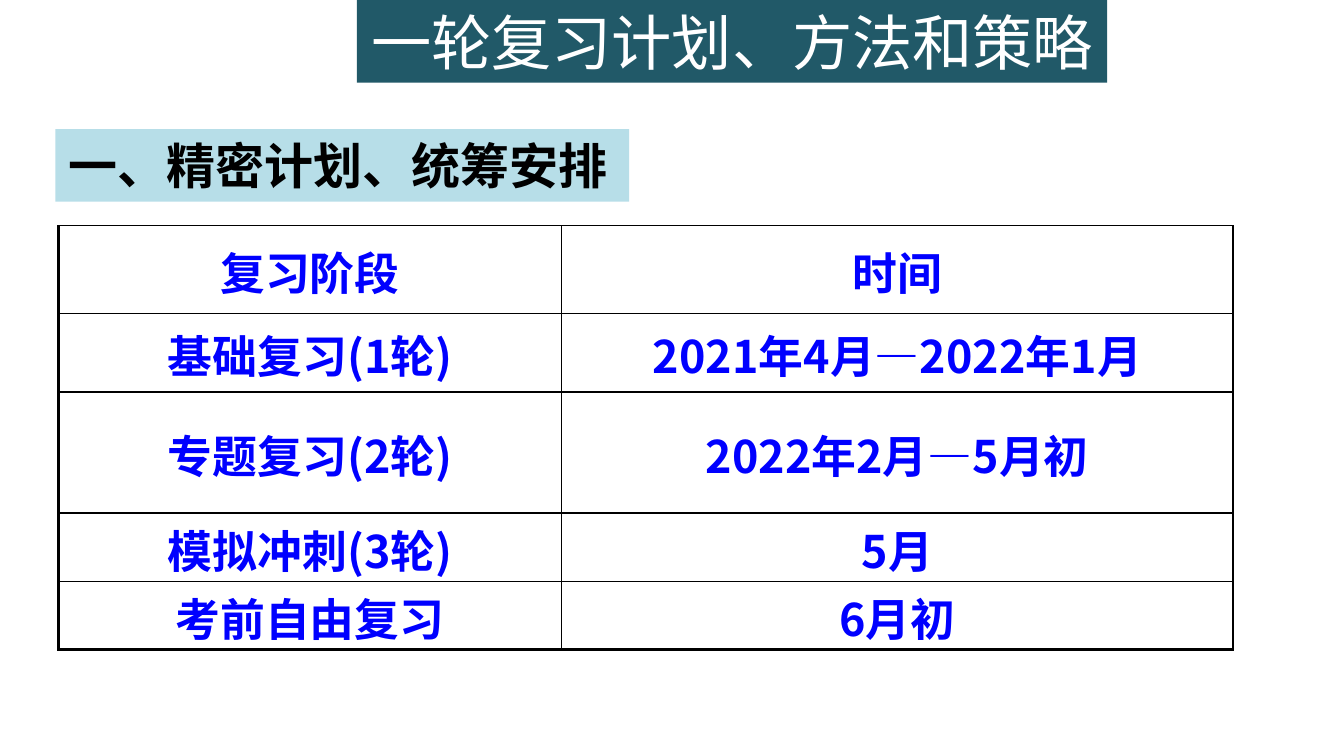
from pptx import Presentation
from pptx.dml.color import RGBColor
from pptx.enum.text import MSO_ANCHOR, MSO_AUTO_SIZE, PP_ALIGN
from pptx.oxml.ns import qn
from pptx.util import Inches, Pt
from lxml.etree import SubElement

# Content
TITLE = "一轮复习计划、方法和策略"
SECTION = "一、精密计划、统筹安排"
SCHEDULE = [
    ("复习阶段", "时间"),
    ("基础复习(1轮)", "2021年4月—2022年1月"),
    ("专题复习(2轮)", "2022年2月—5月初"),
    ("模拟冲刺(3轮)", "5月"),
    ("考前自由复习", "6月初"),
]
COLUMN_WIDTHS = [4.99, 6.66]
ROW_HEIGHTS = [0.87, 0.78, 1.2, 0.67, 0.67]

# Formats
TEAL = RGBColor(0x21, 0x59, 0x68)
PALE_BLUE = RGBColor(0xB7, 0xDE, 0xE8)
BLUE = RGBColor(0x00, 0x00, 0xFF)
BLACK = RGBColor(0x00, 0x00, 0x00)
WHITE = RGBColor(0xFF, 0xFF, 0xFF)
CJK_FONT = "Noto Sans CJK SC"
TITLE_FONT = {"name": CJK_FONT, "size": Pt(43), "bold": False}
SECTION_FONT = {"name": "Calibri", "size": Pt(35), "bold": True}
CELL_FONT = {"name": CJK_FONT, "size": Pt(32), "bold": True}
BANNER_FRAME = {"word_wrap": False, "auto_size": MSO_AUTO_SIZE.NONE,
                "vertical_anchor": MSO_ANCHOR.MIDDLE}
CELL_FORMAT = {"vertical_anchor": MSO_ANCHOR.MIDDLE,
               "margin_left": Inches(0.18), "margin_right": Inches(0.18),
               "margin_top": Inches(0.03), "margin_bottom": 0}
THIN, THICK = Pt(1), Pt(2.25)


def apply(target, values):
    for name, value in values.items():
        setattr(target, name, value)


def write(frame, text, font, color, align):
    para = frame.paragraphs[0]
    para.alignment = align
    span = para.add_run()
    span.text = text
    apply(span.font, font)
    span.font.color.rgb = color
    if font["name"] == CJK_FONT:
        SubElement(span.font._element, qn("a:ea"), typeface=CJK_FONT)


def format_banner(box, area, fill, text, font, color, align, margins):
    places = ("left", "top", "width", "height")
    apply(box, {name: Inches(value) for name, value in zip(places, area)})
    box.fill.solid()
    box.fill.fore_color.rgb = fill
    apply(box.text_frame, BANNER_FRAME)
    for side, value in zip(("left", "right", "top", "bottom"), margins):
        setattr(box.text_frame, f"margin_{side}", Inches(value))
    write(box.text_frame, text, font, color, align)


def add_borders(cell, widths):
    properties = cell._tc.get_or_add_tcPr()
    for side, width in widths.items():
        line = SubElement(properties, qn(f"a:ln{side}"), w=str(width))
        fill = SubElement(line, qn("a:solidFill"))
        SubElement(fill, qn("a:srgbClr"), val=str(BLACK))


deck = Presentation()
deck.slide_width, deck.slide_height = Inches(13.33), Inches(7.5)
page = deck.slides.add_slide(deck.slide_layouts[5])

# Title and section banners
format_banner(page.shapes.title, (3.54, 0, 7.44, 0.82), TEAL, TITLE,
              TITLE_FONT, WHITE, PP_ALIGN.CENTER, (0.1, 0.1, 0.05, 0.05))
section = page.shapes.add_textbox(0, 0, 0, 0)
format_banner(section, (0.55, 1.28, 5.69, 0.72), PALE_BLUE, SECTION,
              SECTION_FONT, BLACK, PP_ALIGN.LEFT, (0.13, 0.13, 0.07, 0.07))

# Schedule table
table = page.shapes.add_table(
    len(SCHEDULE), len(COLUMN_WIDTHS), Inches(0.58), Inches(2.24),
    Inches(sum(COLUMN_WIDTHS)), Inches(sum(ROW_HEIGHTS))).table
apply(table, {"first_row": False, "horz_banding": False})
for column, width in zip(table.columns, COLUMN_WIDTHS):
    column.width = Inches(width)
for row, height in zip(table.rows, ROW_HEIGHTS):
    row.height = Inches(height)

last_row = len(SCHEDULE) - 1
for row_index, entries in enumerate(SCHEDULE):
    for column_index, text in enumerate(entries):
        cell = table.cell(row_index, column_index)
        add_borders(cell, {"L": THICK if column_index == 0 else THIN,
                           "R": THIN, "T": THIN,
                           "B": THICK if row_index == last_row else THIN})
        cell.fill.background()
        apply(cell, CELL_FORMAT)
        write(cell.text_frame, text, CELL_FONT, BLUE, PP_ALIGN.CENTER)

deck.save("out.pptx")
